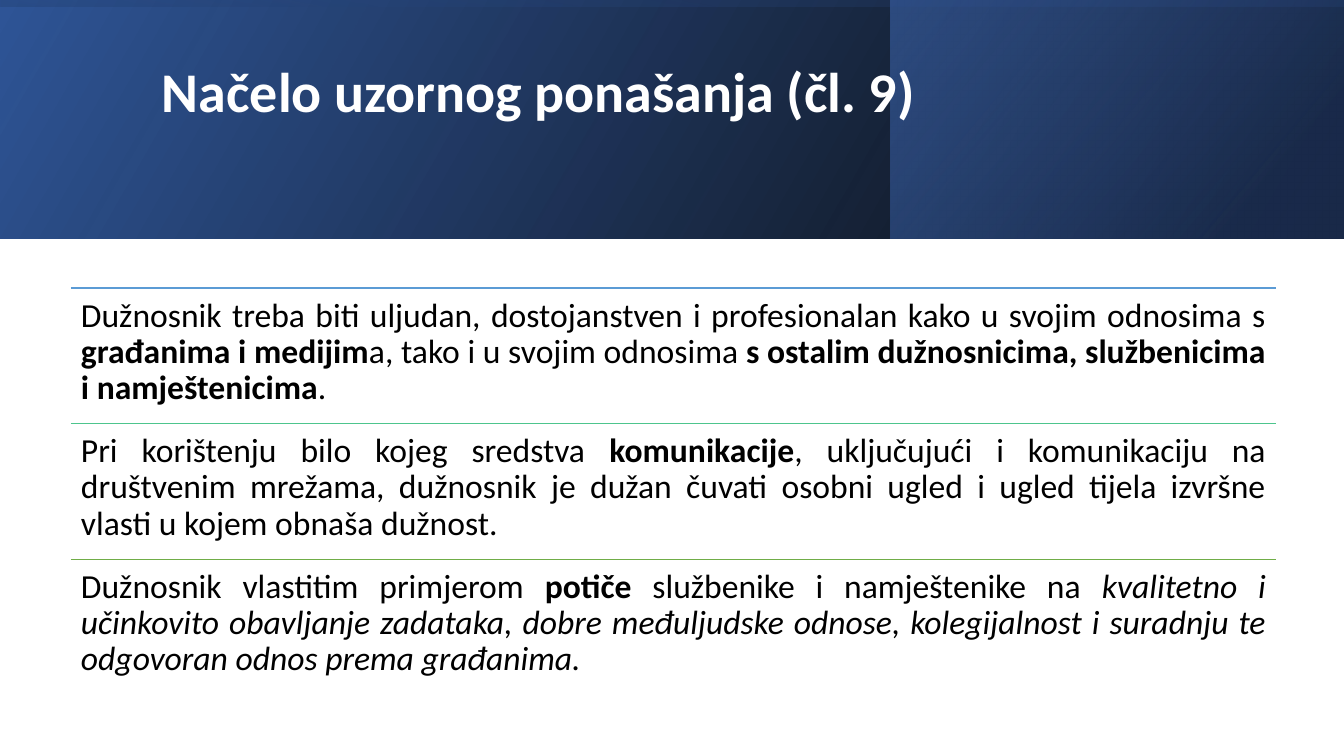
from lxml import etree
from pptx import Presentation
from pptx.dml.color import RGBColor
from pptx.enum.shapes import MSO_CONNECTOR, MSO_SHAPE
from pptx.enum.text import MSO_ANCHOR, PP_ALIGN
from pptx.oxml.ns import qn
from pptx.util import Emu, Pt

PX = 914400 / 100.8
PAGE_WIDTH, PAGE_HEIGHT = 1344, 756
FONT = "Calibri"

TITLE = "Načelo uzornog ponašanja (čl. 9)"
# Each principle: rule colour, then (text, style) spans; b is bold, i is italic
PRINCIPLES = [
    ("5B9BD5", [
        ("Dužnosnik treba biti uljudan, dostojanstven i profesionalan kako u svojim odnosima s ", ""),
        ("građanima i medijim", "b"),
        ("a, tako i u svojim odnosima ", ""),
        ("s ostalim dužnosnicima, službenicima i namještenicima", "b"),
        (".", ""),
    ]),
    ("4DC58D", [
        ("Pri korištenju bilo kojeg sredstva ", ""),
        ("komunikacije", "b"),
        (", uključujući i komunikaciju na društvenim mrežama, dužnosnik je dužan čuvati "
         "osobni ugled i ugled tijela izvršne vlasti u kojem obnaša dužnost.", ""),
    ]),
    ("70AD47", [
        ("Dužnosnik vlastitim primjerom ", ""),
        ("potiče", "b"),
        (" službenike i namještenike na ", ""),
        ("kvalitetno i učinkovito obavljanje zadataka, dobre međuljudske odnose, "
         "kolegijalnost i suradnju te odgovoran odnos prema građanima.", "i"),
    ]),
]


def px(length):
    return Emu(round(length * PX))


def color(value):
    return RGBColor.from_string(value)


def add_gradient_panel(page, left, top, width, height, stops, angle, rotation=0):
    """Add a mirrored rectangle; stops are (percent, colour, opacity percent)."""
    panel = page.shapes.add_shape(
        MSO_SHAPE.RECTANGLE, px(left), px(top), px(width), px(height))
    panel.shadow.inherit = False
    panel.line.fill.background()
    panel.rotation = rotation
    panel._element.spPr.find(qn("a:xfrm")).set("flipH", "1")
    panel.fill.gradient()
    panel.fill.gradient_angle = 360 - angle  # python-pptx counts anticlockwise
    marks = panel._element.spPr.iter(qn("a:gs"))
    for stop, mark, (percent, value, opacity) in zip(panel.fill.gradient_stops, marks, stops):
        stop.position = percent / 100
        stop.color.rgb = color(value)
        if opacity < 100:
            alpha = etree.SubElement(mark.find(qn("a:srgbClr")), qn("a:alpha"))
            alpha.set("val", str(opacity * 1000))


def add_text(page, left, top, width, height, spans, size, value, align, margins, anchor):
    box = page.shapes.add_textbox(px(left), px(top), px(width), px(height))
    frame = box.text_frame
    frame.word_wrap = True
    frame.vertical_anchor = anchor
    (frame.margin_left, frame.margin_top,
     frame.margin_right, frame.margin_bottom) = map(px, margins)
    para = frame.paragraphs[0]
    para.alignment = align
    para.line_spacing = 0.9
    for text, style in spans:
        span = para.add_run()
        span.text = text
        span.font.name = FONT
        span.font.size = Pt(size)
        span.font.color.rgb = color(value)
        span.font.bold = "b" in style
        span.font.italic = "i" in style


def add_rule(page, left, top, width, value):
    rule = page.shapes.add_connector(
        MSO_CONNECTOR.STRAIGHT, px(left), px(top), px(left + width), px(top))
    rule.line.color.rgb = color(value)
    rule.line.width = Pt(1)
    etree.SubElement(rule._element.spPr, qn("a:effectLst"))


def add_header(page, left, top, width, height):
    add_gradient_panel(page, left, top, width, height,
                       [(0, "000000", 96), (100, "2F5597", 100)], 330)
    accent_width = 452
    add_gradient_panel(page, left + width - accent_width - 1, top, accent_width, height,
                       [(19, "203864", 68), (100, "4472C4", 48)], 320)
    # A quarter turn swaps the sides around the shared centre
    shift = (width - height) / 2
    add_gradient_panel(page, left + shift, top - shift, height, width,
                       [(23, "2F5597", 16), (99, "000000", 45)], 350, rotation=270)
    add_text(page, left + 152, top + 38, 1072, 173, [(TITLE, "b")], 40, "FFFFFF",
             PP_ALIGN.LEFT, (10, 5, 10, 66), MSO_ANCHOR.MIDDLE)


def add_principles(page, left, top, width, height):
    row_height = height / len(PRINCIPLES)
    for index, (value, spans) in enumerate(PRINCIPLES):
        row_top = top + index * row_height
        add_rule(page, left, row_top, width, value)
        add_text(page, left, row_top, width, row_height, spans, 24, "000000",
                 PP_ALIGN.JUSTIFY, (10, 10, 10, 10), MSO_ANCHOR.TOP)


def main():
    deck = Presentation()
    deck.slide_width, deck.slide_height = px(PAGE_WIDTH), px(PAGE_HEIGHT)
    page = deck.slides.add_slide(deck.slide_layouts[6])
    add_header(page, 0, 0, PAGE_WIDTH, 239)
    add_principles(page, 71, 288, 1205, 407)
    deck.save("out.pptx")


if __name__ == "__main__":
    main()
